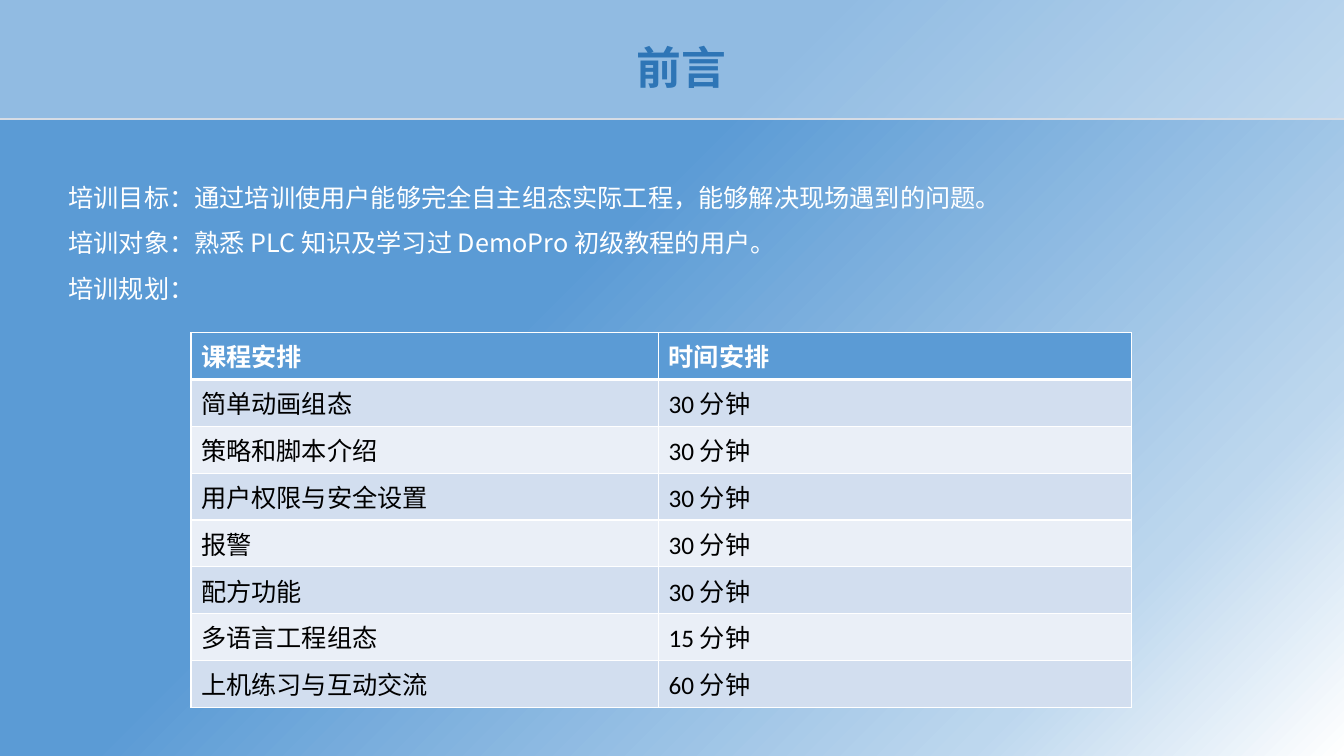
from lxml import etree
from pptx import Presentation
from pptx.dml.color import RGBColor
from pptx.enum.shapes import MSO_SHAPE
from pptx.enum.text import MSO_ANCHOR, PP_ALIGN
from pptx.oxml import parse_xml
from pptx.oxml.ns import qn
from pptx.util import Pt

RECTANGLE = MSO_SHAPE.RECTANGLE
CENTER = PP_ALIGN.CENTER
MIDDLE = MSO_ANCHOR.MIDDLE
NAMESPACE = "http://schemas.openxmlformats.org/drawingml/2006/main"
CJK_FONT = "Noto Sans CJK SC"
TABLE_FONT = "Calibri"
WHITE, BLUE = "FFFFFF", "5B9BD5"
BANDS = ("D2DEEF", "EAEFF7")
GOALS = (
    "培训目标：通过培训使用户能够完全自主组态实际工程，能够解决现场遇到的问题。",
    "培训对象：熟悉 PLC 知识及学习过 DemoPro 初级教程的用户。",
    "培训规划：",
)
SCHEDULE = (
    ("课程安排", "时间安排"),
    ("简单动画组态", "30 分钟"),
    ("策略和脚本介绍", "30 分钟"),
    ("用户权限与安全设置", "30 分钟"),
    ("报警", "30 分钟"),
    ("配方功能", "30 分钟"),
    ("多语言工程组态", "15 分钟"),
    ("上机练习与互动交流", "60 分钟"),
)


def color(code):
    return RGBColor.from_string(code)


def add_span(para, text, size, code, font=CJK_FONT, bold=False):
    span = para.add_run()
    span.text = text
    span.font.name = font
    span.font.size = Pt(size)
    span.font.bold = bold
    span.font.color.rgb = color(code)
    latin = span.font._element.find(qn("a:latin"))
    east_asian = etree.Element(qn("a:ea"), typeface=CJK_FONT)
    latin.addnext(east_asian)


def add_text_frame(page, left, top, width, height):
    box = page.shapes.add_textbox(Pt(left), Pt(top), Pt(width), Pt(height))
    box.text_frame.word_wrap = True
    return box.text_frame


def paint_background(page):
    page.background.fill.gradient()
    gradient = next(page._element.iter(qn("a:gradFill")))
    stops = "".join(
        f'<a:gs pos="{percent * 1000}"><a:srgbClr val="{code}"/></a:gs>'
        for percent, code in ((0, WHITE), (18, "BDD7EE"), (60, BLUE))
    )
    gradient.getparent().replace(gradient, parse_xml(
        f'<a:gradFill xmlns:a="{NAMESPACE}" rotWithShape="1"><a:gsLst>{stops}</a:gsLst>'
        '<a:path path="circle"><a:fillToRect l="100000" t="100000"/></a:path></a:gradFill>'
    ))


def add_banner(page, left, top, width, height):
    banner = page.shapes.add_shape(RECTANGLE, Pt(left), Pt(top), Pt(width), Pt(height))
    banner.shadow.inherit = False
    banner.fill.solid()
    banner.fill.fore_color.rgb = color(WHITE)
    fill = banner._element.spPr.find(qn("a:solidFill"))
    etree.SubElement(fill[0], qn("a:alpha"), val="33000")
    banner.line.color.rgb = color("D6DCE5")
    banner.line.width = Pt(1)

    title = add_text_frame(page, left + 291.4, top + 25.2, 392.4, 46.1)
    title.vertical_anchor = MIDDLE
    para = title.paragraphs[0]
    para.alignment = CENTER
    add_span(para, "前言", 32, "2E75B6", bold=True)


def add_goals(page, left, top, width, height):
    frame = add_text_frame(page, left, top, width, height)
    for index, goal in enumerate(GOALS):
        para = frame.add_paragraph() if index else frame.paragraphs[0]
        para.line_spacing = 1.5
        add_span(para, goal, 18, WHITE)


def add_borders(cell, top_width, bottom_width):
    properties = cell._tc.get_or_add_tcPr()
    widths = (("lnL", 1), ("lnR", 1), ("lnT", top_width), ("lnB", bottom_width))
    for index, (side, width) in enumerate(widths):
        properties.insert(index, parse_xml(
            f'<a:{side} xmlns:a="{NAMESPACE}" w="{Pt(width)}"><a:solidFill>'
            f'<a:srgbClr val="{WHITE}"/></a:solidFill></a:{side}>'
        ))


def add_schedule(page, left, top, width, height):
    frame = page.shapes.add_table(
        len(SCHEDULE), 2, Pt(left), Pt(top), Pt(width), Pt(height)
    )
    table = frame.table
    first_width = 334
    table.columns[0].width = Pt(first_width)
    table.columns[1].width = Pt(width - first_width)
    for row, texts in enumerate(SCHEDULE):
        header = row == 0
        table.rows[row].height = Pt(height / len(SCHEDULE))
        for column, text in enumerate(texts):
            cell = table.cell(row, column)
            cell.fill.solid()
            cell.fill.fore_color.rgb = color(BLUE if header else BANDS[(row - 1) % 2])
            add_borders(cell, 3 if row == 1 else 1, 3 if header else 1)
            add_span(cell.text_frame.paragraphs[0], text, 18,
                     WHITE if header else "000000", TABLE_FONT, header)


def main():
    deck = Presentation()
    deck.slide_width, deck.slide_height = Pt(960), Pt(540)
    page = deck.slides.add_slide(deck.slide_layouts[6])
    paint_background(page)
    add_banner(page, -0.7, -0.7, 961.2, 85.7)
    add_goals(page, 41.8, 115.9, 897, 101.5)
    add_schedule(page, 136.4, 237.6, 671.8, 267.8)
    deck.save("out.pptx")


if __name__ == "__main__":
    main()
